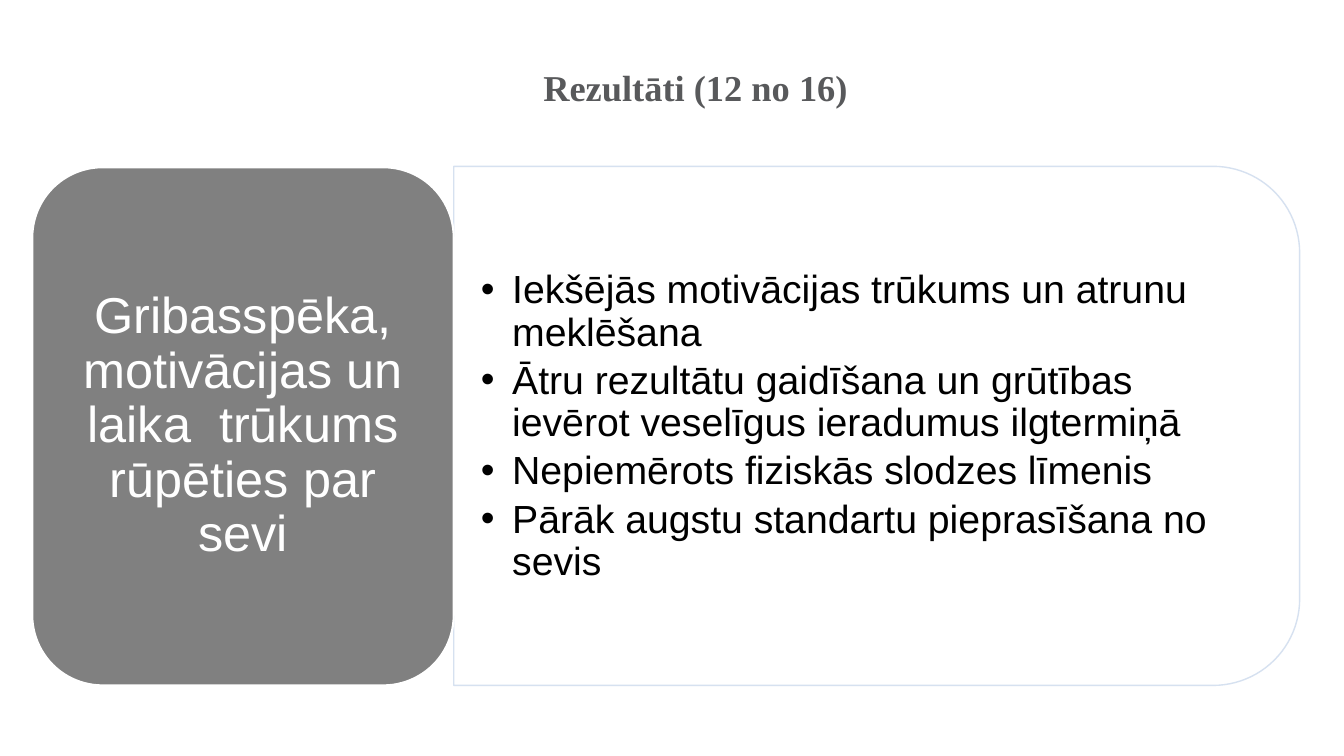
from dataclasses import dataclass

from lxml.etree import SubElement
from pptx import Presentation
from pptx.dml.color import RGBColor as Rgb
from pptx.enum.shapes import MSO_SHAPE as Shape
from pptx.enum.text import MSO_ANCHOR as Anchor, MSO_AUTO_SIZE as Fit, PP_ALIGN as Align
from pptx.oxml.ns import qn
from pptx.util import Inches, Pt

TITLE = "Rezultāti (12 no 16)"
LABEL = "Gribasspēka, motivācijas un laika  trūkums rūpēties par sevi"
POINTS = [
    "Iekšējās motivācijas trūkums un atrunu meklēšana",
    "Ātru rezultātu gaidīšana un grūtības ievērot veselīgus ieradumus ilgtermiņā",
    "Nepiemērots fiziskās slodzes līmenis",
    "Pārāk augstu standartu pieprasīšana no sevis",
]

# left, top, width, height
HEAD = (1.15, 0.7, 11.5, 1.13)
CARD = (0.32, 1.66, 4.18, 5.14)
PANEL = (4.5, 1.65, 8.39, 5.15)
LIST = (4.5, 1.91, 8.14, 4.65)
HANG = Inches(0.31)


@dataclass(frozen=True)
class Theme:
    white: str = "FFFFFF"
    grey: str = "808080"
    edge: str = "D2DEEF"
    ink: str = "000000"
    head: str = "58595B"
    serif: str = "Times New Roman"
    sans: str = "Arial"
    title: int = 26
    label: int = 36
    point: int = 28
    alpha: int = 90


THEME = Theme()


def place(shape, box):
    shape.left, shape.top, shape.width, shape.height = map(Inches, box)


def setup(shape, anchor, side, end):
    """Set the text frame's anchor and its side and end insets."""
    frame = shape.text_frame
    frame.word_wrap = True
    frame.auto_size = Fit.NONE
    frame.vertical_anchor = anchor
    frame.margin_left = frame.margin_right = Inches(side)
    frame.margin_top = frame.margin_bottom = Inches(end)
    return frame


def write(para, text, face, size, color, align, bold=False):
    para.alignment = align
    para.line_spacing = 0.9
    para.space_before = Pt(0)
    run = para.add_run()
    run.text = text
    font = run.font
    font.name, font.size, font.bold = face, Pt(size), bold
    font.color.rgb = Rgb.from_string(color)


def bullet(para):
    props = para._p.get_or_add_pPr()
    props.set("marL", str(HANG))
    props.set("indent", str(-HANG))
    SubElement(props, qn("a:buFont"), typeface=THEME.sans)
    SubElement(props, qn("a:buChar"), char="•")


def draw(slide, kind, box, fill, edge, weight):
    shape = slide.shapes.add_shape(kind, *map(Inches, box))
    shape.shadow.inherit = False
    shape.fill.solid()
    shape.fill.fore_color.rgb = Rgb.from_string(fill)
    shape.line.color.rgb = Rgb.from_string(edge)
    shape.line.width = Pt(weight)
    return shape


def turn(box):
    """Return the unrotated box that covers box after a quarter turn."""
    left, top, wide, high = box
    return left + (wide - high) / 2, top + (high - wide) / 2, high, wide


def main():
    deck = Presentation()
    deck.slide_width, deck.slide_height = Inches(13.33), Inches(7.5)
    slide = deck.slides.add_slide(deck.slide_layouts[1])

    head = slide.shapes.title
    place(head, HEAD)
    frame = setup(head, Anchor.TOP, 0, 0)
    write(frame.paragraphs[0], TITLE, THEME.serif, THEME.title, THEME.head,
          Align.CENTER, True)

    panel = draw(slide, Shape.ROUND_2_SAME_RECTANGLE, turn(PANEL),
                 THEME.white, THEME.edge, 1)
    panel.rotation = 90
    for color in panel._element.spPr.iter(qn("a:srgbClr")):
        SubElement(color, qn("a:alpha"), val=str(THEME.alpha * 1000))

    body = slide.placeholders[1]
    place(body, LIST)
    panel._element.addnext(body._element)
    frame = setup(body, Anchor.MIDDLE, 0.27, 0.14)
    for i, text in enumerate(POINTS):
        para = frame.add_paragraph() if i else frame.paragraphs[0]
        bullet(para)
        write(para, text, THEME.sans, THEME.point, THEME.ink, Align.LEFT)
        para.space_after = Pt(4.2)

    card = draw(slide, Shape.ROUNDED_RECTANGLE, CARD, THEME.grey, THEME.white, 1.5)
    frame = setup(card, Anchor.MIDDLE, 0.15, 0.07)
    write(frame.paragraphs[0], LABEL, THEME.sans, THEME.label, THEME.white,
          Align.CENTER)

    deck.save("out.pptx")


if __name__ == "__main__":
    main()
